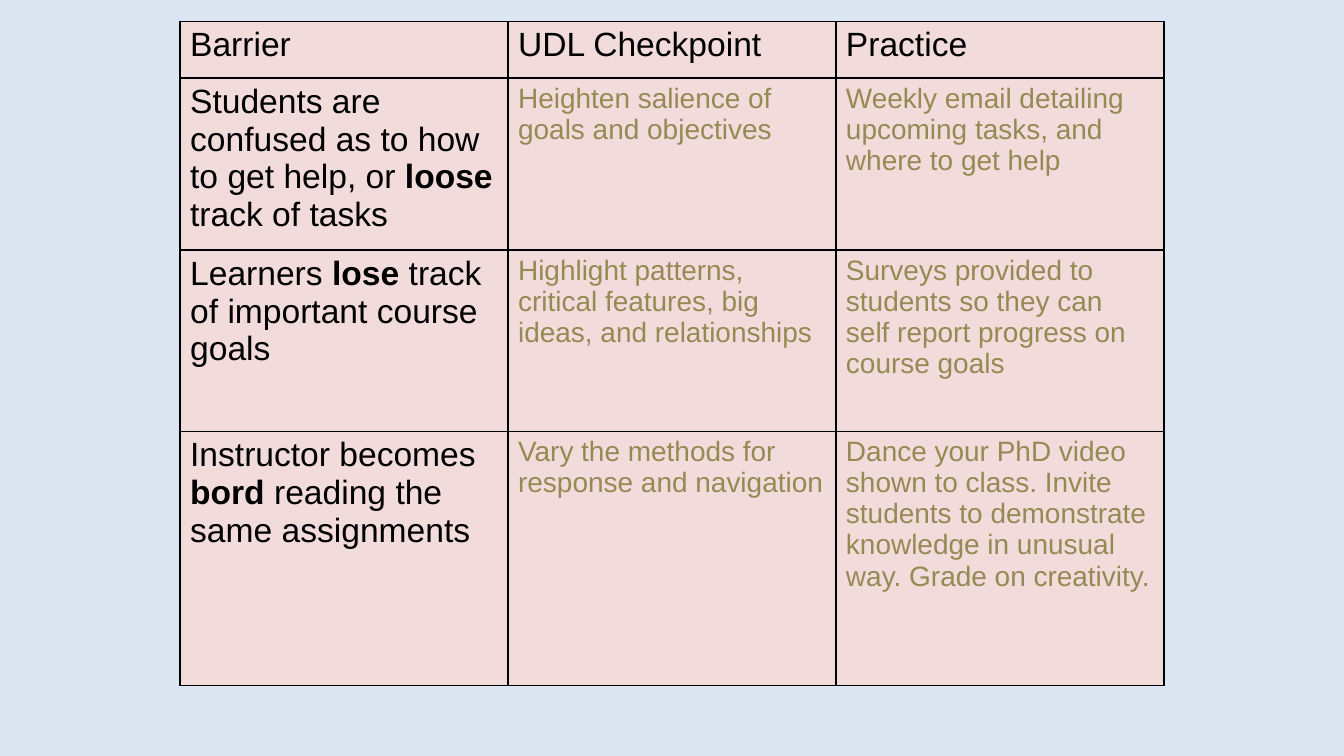
from dataclasses import dataclass

from lxml import etree
from pptx import Presentation
from pptx.dml.color import RGBColor
from pptx.oxml.ns import qn
from pptx.table import _Cell
from pptx.util import Inches, Pt

BLACK = "000000"
OLIVE = "948A54"
PINK = "F2DCDB"
PALE_BLUE = "DCE6F2"
PAGE_WIDTH = 10
MARGIN_SCALE = 0.75
COLUMN_WIDTH = 2.44
ROW_HEIGHTS = (0.42, 1.28, 1.35, 1.89)
BORDER_SIDES = ("lnL", "lnR", "lnT", "lnB")


@dataclass(frozen=True)
class Style:
    size: int
    color: str


@dataclass(frozen=True)
class Row:
    barrier: tuple[str, ...]
    checkpoint: str
    practice: str
    answer_style: Style


LARGE = Style(18, BLACK)
ANSWER = Style(15, OLIVE)

ROWS = (
    Row(("Barrier",), "UDL Checkpoint", "Practice", LARGE),
    Row(
        ("Students are confused as to how to get help, or ", "loose", " track of tasks"),
        "Heighten salience of goals and objectives",
        "Weekly email detailing upcoming tasks, and where to get help",
        ANSWER,
    ),
    Row(
        ("Learners ", "lose", " track of important course goals"),
        "Highlight patterns, critical features, big ideas, and relationships",
        "Surveys provided to students so they can self report progress on course goals",
        ANSWER,
    ),
    Row(
        ("Instructor becomes ", "bord", " reading the same assignments"),
        "Vary the methods for response and navigation",
        "Dance your PhD video shown to class. Invite students to demonstrate "
        "knowledge in unusual way. Grade on creativity.",
        ANSWER,
    ),
)


def rgb(value: str) -> RGBColor:
    return RGBColor.from_string(value)


def add_borders(cell: _Cell) -> None:
    properties = cell._tc.get_or_add_tcPr()
    for side in BORDER_SIDES:
        line = etree.SubElement(properties, qn(f"a:{side}"), w=str(Pt(1)))
        fill = etree.SubElement(line, qn("a:solidFill"))
        etree.SubElement(fill, qn("a:srgbClr"), val=BLACK)


def fill_cell(cell: _Cell, spans: tuple[str, ...], style: Style) -> None:
    add_borders(cell)
    cell.fill.solid()
    cell.fill.fore_color.rgb = rgb(PINK)
    cell.margin_left = cell.margin_right = Inches(0.1 * MARGIN_SCALE)
    cell.margin_top = cell.margin_bottom = Inches(0.05 * MARGIN_SCALE)
    para = cell.text_frame.paragraphs[0]
    for index, text in enumerate(spans):
        span = para.add_run()
        span.text = text
        if index % 2 == 1:
            span.font.bold = True
    para.font.name = "Arial"
    para.font.size = Pt(style.size)
    para.font.color.rgb = rgb(style.color)


def main() -> None:
    deck = Presentation()
    deck.slide_width = Inches(PAGE_WIDTH)
    deck.slide_height = Inches(PAGE_WIDTH * 9 / 16)
    page = deck.slides.add_slide(deck.slide_layouts[6])
    page.background.fill.solid()
    page.background.fill.fore_color.rgb = rgb(PALE_BLUE)

    table = page.shapes.add_table(
        len(ROWS), 3, Inches(1.34), Inches(0.16),
        Inches(3 * COLUMN_WIDTH), Inches(sum(ROW_HEIGHTS)),
    ).table
    table.first_row = False
    table.horz_banding = False
    for column in table.columns:
        column.width = Inches(COLUMN_WIDTH)
    for table_row, height, row in zip(table.rows, ROW_HEIGHTS, ROWS):
        table_row.height = Inches(height)
        barrier, checkpoint, practice = table_row.cells
        fill_cell(barrier, row.barrier, LARGE)
        fill_cell(checkpoint, (row.checkpoint,), row.answer_style)
        fill_cell(practice, (row.practice,), row.answer_style)

    deck.save("out.pptx")


if __name__ == "__main__":
    main()
